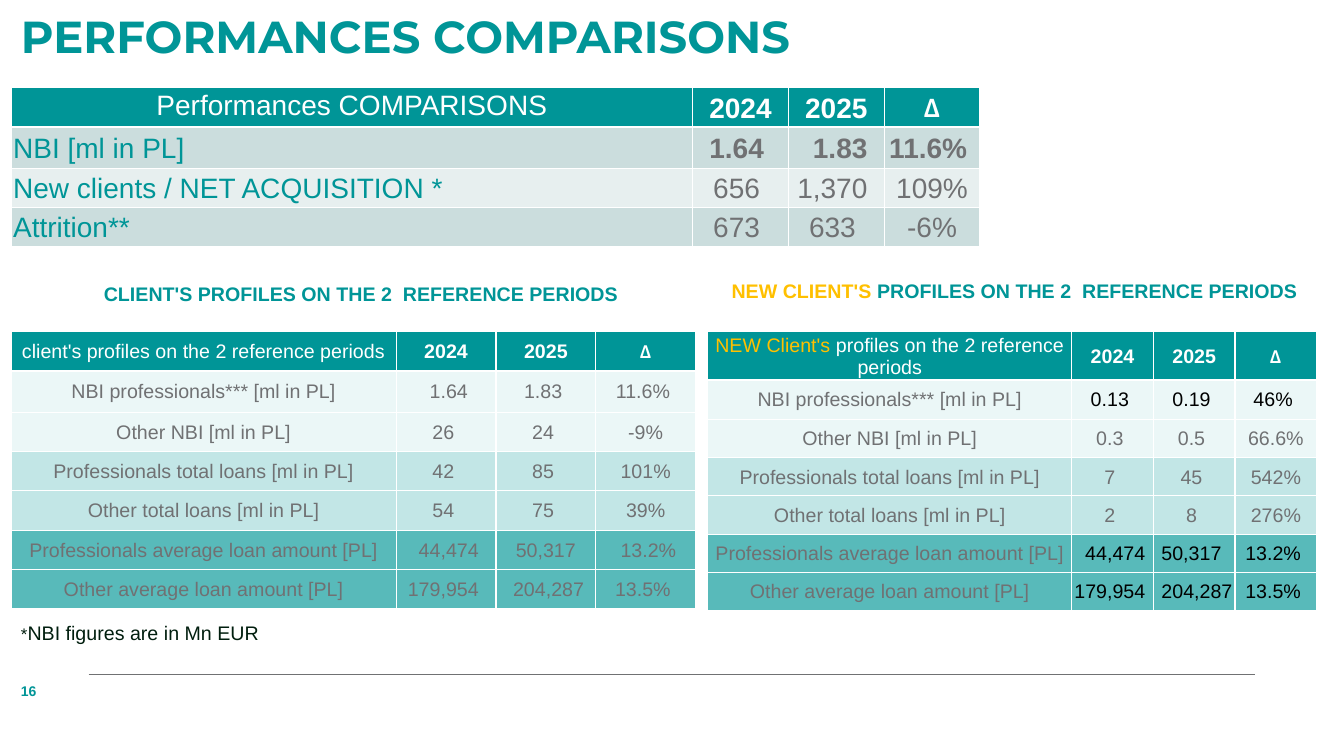
from pptx import Presentation
from pptx.dml.color import RGBColor
from pptx.enum.shapes import MSO_CONNECTOR
from pptx.enum.text import MSO_ANCHOR, PP_ALIGN
from pptx.oxml.ns import qn
from pptx.util import Pt
from lxml.etree import SubElement

PX = 9144
SLIDE_SIZE = (1333, 750)
COLORS = {
    "teal": "009597", "white": "FFFFFF", "gray": "707173", "gold": "FFC000",
    "black": "000000", "ink": "001E0E", "mist": "CBDDDD", "haze": "E7EFEF",
    "pale": "EBF7F7", "light": "C2E6E6", "medium": "58BABA",
}
PROFILE_FILLS = ["pale", "pale", "light", "light", "medium", "medium"]
YEARS = ["2024", "2025", "∆"]

TEXTS = [
    {"box": (11, 12, 1181, 66), "spacing": 0.85,
     "runs": [("PERFORMANCES COMPARISONS", 32, "teal", True, "Montserrat")]},
    {"box": (26, 275, 670, 34), "align": PP_ALIGN.CENTER,
     "runs": [("CLIENT'S PROFILES ON THE 2  REFERENCE PERIODS ", 14, "teal", True, "Arial")]},
    {"box": (674, 272, 670, 34), "align": PP_ALIGN.CENTER,
     "runs": [("NEW CLIENT'S ", 14, "gold", True, "Arial"),
              ("PROFILES ON THE 2  REFERENCE PERIODS ", 14, "teal", True, "Arial")]},
    {"box": (11, 671, 59, 28), "anchor": MSO_ANCHOR.MIDDLE,
     "runs": [("16", 10, "teal", True, "Arial")]},
    {"box": (11, 611, 339, 34),
     "runs": [("*", 12, "ink", False, "Arial"),
              ("NBI figures are in Mn EUR", 14, "ink", False, "Arial")]},
]

TABLES = [
    {"origin": (11, 87), "widths": [676, 95, 95, 95], "heights": [39, 41, 39, 39],
     "size": 20, "inset": 2, "fills": ["mist", "haze", "mist"],
     "title": [("Performances COMPARISONS", "white")], "title_anchor": MSO_ANCHOR.TOP,
     "label": ("teal", PP_ALIGN.LEFT), "marked_rows": [1], "marked_style": ("gray", True),
     "rows": [
         ["NBI [ml in PL]", "1.64 ", " 1.83", "11.6% "],
         ["New clients / NET ACQUISITION *", "656 ", "1,370 ", "109%"],
         ["Attrition**", "673 ", "633 ", "-6%"],
     ]},
    {"origin": (11, 329), "widths": [382, 99, 99, 99], "heights": [39, 41] + [39] * 5,
     "size": 14, "inset": 1, "fills": PROFILE_FILLS,
     "title": [("client's profiles on the 2 reference periods", "white")],
     "title_anchor": MSO_ANCHOR.MIDDLE,
     "label": ("gray", PP_ALIGN.CENTER), "marked_rows": [], "marked_style": ("gray", False),
     "rows": [
         ["NBI professionals*** [ml in PL]", " 1.64", "1.83 ", "11.6% "],
         ["Other NBI [ml in PL]", "26 ", "24 ", "-9%"],
         ["Professionals total loans [ml in PL]", "42 ", "85 ", "101%"],
         ["Other total loans [ml in PL]", "54 ", "75 ", "39%"],
         ["Professionals average loan amount [PL]", " 44,474", "50,317", " 13.2%"],
         ["Other average loan amount [PL]", "179,954 ", " 204,287", "13.5% "],
     ]},
    {"origin": (702, 329), "widths": [361, 81, 81, 81], "heights": [48, 39] + [38] * 5,
     "size": 14, "inset": 1, "fills": PROFILE_FILLS,
     "title": [("NEW Client's", "gold"), (" profiles on the 2 reference periods", "white")],
     "title_anchor": MSO_ANCHOR.MIDDLE,
     "label": ("gray", PP_ALIGN.CENTER), "marked_rows": [1, 5, 6],
     "marked_style": ("black", False),
     "rows": [
         ["NBI professionals*** [ml in PL]", "0.13 ", "0.19 ", "46% "],
         ["Other NBI [ml in PL]", "0.3 ", "0.5 ", "66.6%"],
         ["Professionals total loans [ml in PL]", "7 ", "45 ", "542%"],
         ["Other total loans [ml in PL]", "2 ", "8 ", "276%"],
         ["Professionals average loan amount [PL]", " 44,474", "50,317 ", "13.2% "],
         ["Other average loan amount [PL]", "179,954 ", " 204,287", "13.5% "],
     ]},
]


def rgb(name):
    return RGBColor.from_string(COLORS[name])


def write_runs(paragraph, runs):
    for text, size, color, bold, font_name in runs:
        run = paragraph.add_run()
        run.text = text
        run.font.size = Pt(size)
        run.font.color.rgb = rgb(color)
        run.font.bold = bold
        run.font.name = font_name


def add_text(slide, item):
    text_box = slide.shapes.add_textbox(*(value * PX for value in item["box"]))
    frame = text_box.text_frame
    frame.word_wrap = True
    frame.vertical_anchor = item.get("anchor", MSO_ANCHOR.TOP)
    paragraph = frame.paragraphs[0]
    paragraph.alignment = item.get("align", PP_ALIGN.LEFT)
    if "spacing" in item:
        paragraph.line_spacing = item["spacing"]
    write_runs(paragraph, item["runs"])


def add_borders(cell, row):
    properties = cell._tc.get_or_add_tcPr()
    widths = {"lnL": 1, "lnR": 1, "lnT": 1.5 if row == 1 else 1, "lnB": 1.5 if row == 0 else 1}
    for tag, width in widths.items():
        line = SubElement(properties, qn("a:" + tag), w=str(Pt(width)))
        fill = SubElement(line, qn("a:solidFill"))
        SubElement(fill, qn("a:srgbClr"), val=COLORS["white"])


def cell_content(data, row, column):
    size = data["size"]
    if row == 0 and column == 0:
        return [(text, size, color, False, "Arial") for text, color in data["title"]]
    if row == 0:
        text = YEARS[column - 1]
        return [(text, size, "white", True, "Calibri" if text == "∆" else "Arial")]
    color, bold = "gray", False
    if column == 0:
        color = data["label"][0]
    elif row in data["marked_rows"]:
        color, bold = data["marked_style"]
    return [(data["rows"][row - 1][column], size, color, bold, "Arial")]


def add_data_table(slide, data):
    widths, heights = data["widths"], data["heights"]
    left, top = data["origin"]
    table = slide.shapes.add_table(len(heights), len(widths), left * PX, top * PX,
                                   sum(widths) * PX, sum(heights) * PX).table
    for column, width in enumerate(widths):
        table.columns[column].width = width * PX
    for row, height in enumerate(heights):
        table.rows[row].height = height * PX
        for column in range(len(widths)):
            cell = table.cell(row, column)
            add_borders(cell, row)
            cell.fill.solid()
            cell.fill.fore_color.rgb = rgb("teal" if row == 0 else data["fills"][row - 1])
            cell.margin_left = cell.margin_right = cell.margin_top = data["inset"] * PX
            cell.margin_bottom = 0
            is_title = row == 0 and column == 0
            cell.vertical_anchor = data["title_anchor"] if is_title else MSO_ANCHOR.MIDDLE
            paragraph = cell.text_frame.paragraphs[0]
            is_label = row > 0 and column == 0
            paragraph.alignment = data["label"][1] if is_label else PP_ALIGN.CENTER
            write_runs(paragraph, cell_content(data, row, column))


def add_footer_line(slide):
    line = slide.shapes.add_connector(MSO_CONNECTOR.STRAIGHT, 88 * PX, 669 * PX,
                                      1245 * PX, 669 * PX)
    line.line.color.rgb = rgb("gray")
    line.line.width = Pt(0.5)
    SubElement(line._element.spPr, qn("a:effectLst"))


def main():
    presentation = Presentation()
    presentation.slide_width, presentation.slide_height = (side * PX for side in SLIDE_SIZE)
    slide = presentation.slides.add_slide(presentation.slide_layouts[6])
    add_footer_line(slide)
    for item in TEXTS:
        add_text(slide, item)
    for data in TABLES:
        add_data_table(slide, data)
    presentation.save("out.pptx")


if __name__ == "__main__":
    main()
